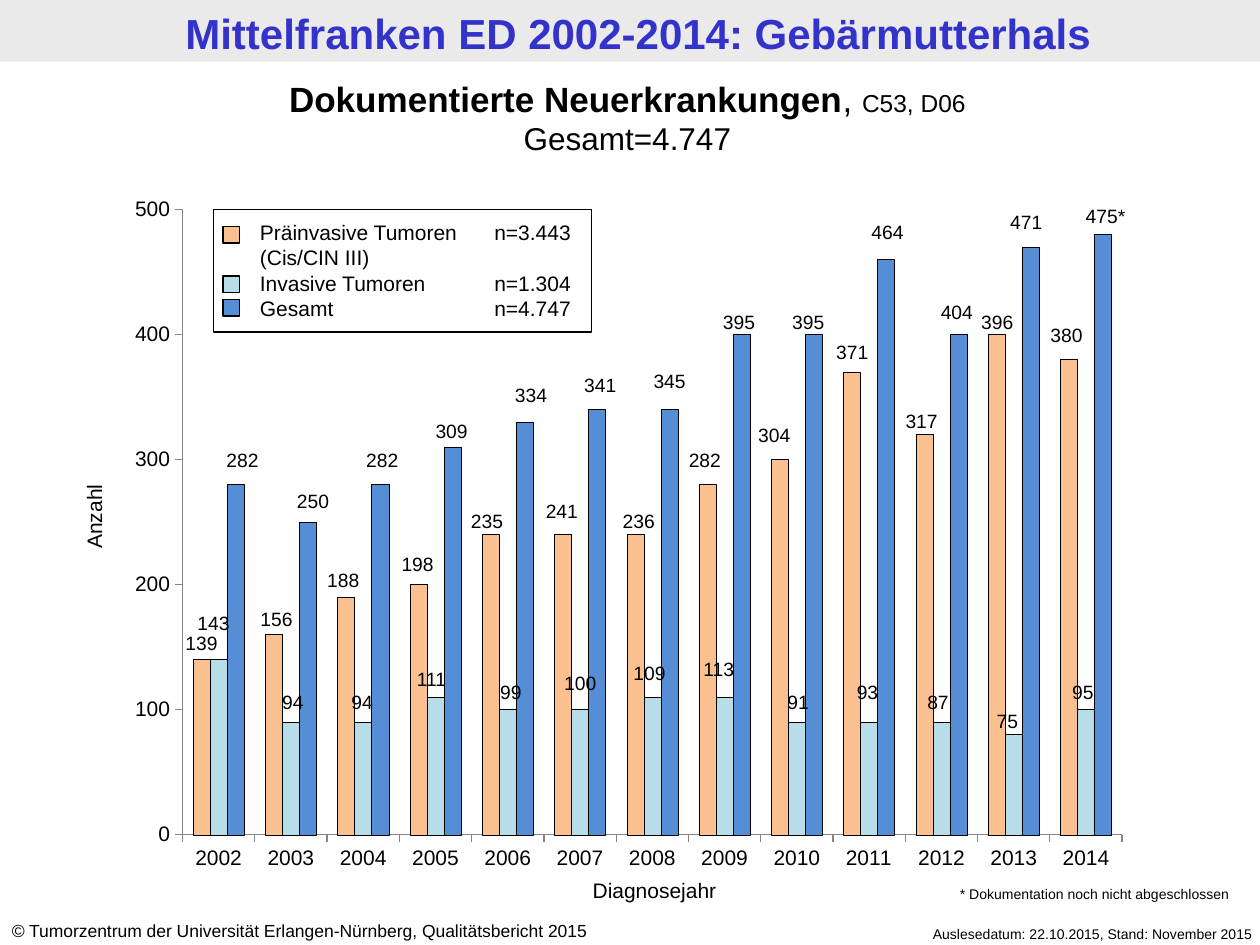
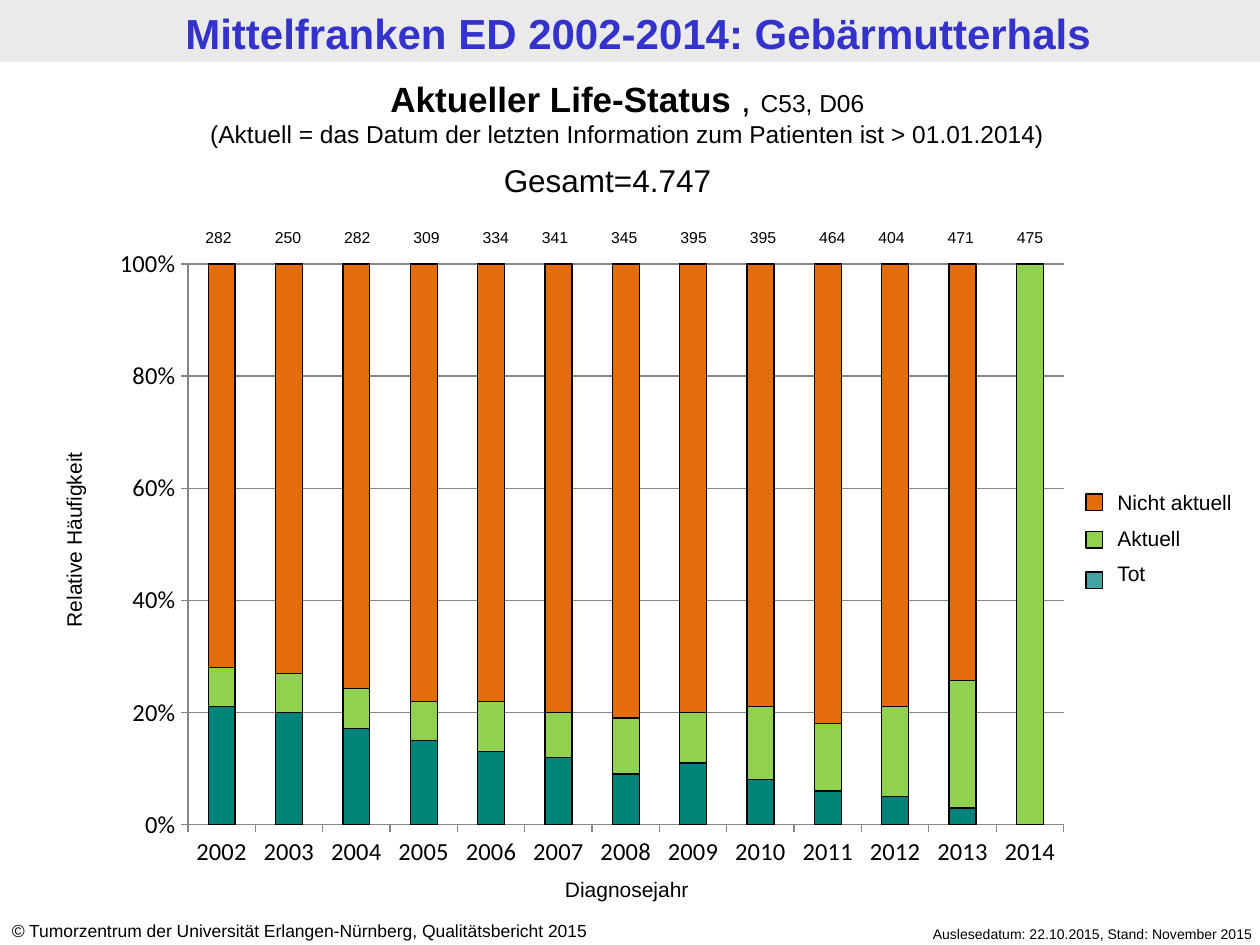
from lxml.etree import SubElement as Sub
from pptx import Presentation
from pptx.chart.data import CategoryChartData as Data
from pptx.dml.color import RGBColor as RGB
from pptx.enum.chart import XL_CHART_TYPE as Kind, XL_TICK_MARK as Tick
from pptx.enum.shapes import MSO_SHAPE as Form
from pptx.enum.text import MSO_AUTO_SIZE as Auto, PP_ALIGN as Align
from pptx.oxml.ns import qn
from pptx.util import Inches, Pt

BLACK = RGB(0x00, 0x00, 0x00)
BLUE = RGB(0x33, 0x33, 0xCC)
BAND = RGB(0xEA, 0xEA, 0xEA)
GREY = RGB(0x86, 0x86, 0x86)
PEACH = RGB(0xFA, 0xC0, 0x90)
ICE = RGB(0xB7, 0xDE, 0xE8)
SKY = RGB(0x55, 0x8E, 0xD5)
TEAL = RGB(0x00, 0x83, 0x78)
PALE = RGB(0x00, 0x83, 0x80)
LIME = RGB(0x92, 0xD0, 0x50)
RUST = RGB(0xE4, 0x6C, 0x0A)

YEARS = [str(year) for year in range(2002, 2015)]
TOTALS = [282, 250, 282, 309, 334, 341, 345, 395, 395, 464, 404, 471, 475]

# Counts per tumour group: colour, values, label centres (columns), label tops (rows)
GROUPS = [
    (PEACH,
     [139, 156, 188, 198, 235, 241, 236, 282, 304, 371, 317, 396, 380],
     [16, 21.95, 27.25, 33.15, 38.65, 44.6, 50.7, 55.95, 61.45, 67.65, 73.15,
      79.15, 84.65],
     [49.6, 47.7, 44.6, 43.3, 39.9, 39.1, 39.9, 35.1, 33.1, 26.5, 32, 24.1,
      25.2]),
    (ICE,
     [143, 94, 94, 111, 99, 100, 109, 113, 91, 93, 87, 75, 95],
     [16.95, 23.25, 28.75, 34.25, 40.55, 46.05, 51.55, 57.05, 63.35, 68.85,
      74.45, 79.95, 85.95],
     [48, 54.3, 54.3, 52.5, 53.5, 52.8, 52, 51.7, 54.3, 53.5, 54.3, 55.8,
      53.5]),
    (SKY,
     TOTALS,
     [19.25, 24.85, 30.35, 35.85, 42.15, 47.65, 53.15, 58.65, 64.15, 70.45,
      75.95, 81.45, 87.75],
     [35.1, 38.3, 35.1, 32.8, 29.9, 29.1, 28.8, 24.1, 24.1, 17, 23.3, 16.2,
      15.7]),
]

# Shares of life status in percent, from the bottom of each column up
STATES = [
    (TEAL, [21, 20, 17, 15, 13, 12, 9, 11, 8, 6, 5, 3, 0]),
    (LIME, [7, 7, 7, 7, 9, 8, 10, 9, 13, 12, 16, 23, 100]),
    (RUST, [72, 73, 75, 78, 78, 80, 81, 80, 79, 82, 79, 75, 0]),
]


class Deck:
    """Shared style and current slide, on a grid of 100 columns by 75 rows."""
    cols, rows, face = 100, 75, "Arial"

    def __init__(self):
        self.show = Presentation()
        self.show.slide_width, self.show.slide_height = Inches(10), Inches(7.5)

    def grid(self, x, y, w, h):
        col = self.show.slide_width / self.cols
        row = self.show.slide_height / self.rows
        return [round(n) for n in (x * col, y * row, w * col, h * row)]

    def page(self):
        """Start a slide with its title band and footers."""
        self.slide = self.show.slides.add_slide(self.show.slide_layouts[6])
        self.rect(0, 0, 100, 4.9, BAND, edge=False)
        self.text(0.65, 0.2, 100, 4.9,
                  [[("Mittelfranken ED 2002-2014: Gebärmutterhals", 24, "b")]],
                  color=BLUE, pad=(0.09, 0.04))
        self.text(66.5, 72.95, 33.9, 2.4,
                  [[("Auslesedatum: 22.10.2015, Stand: November 2015", 8)]],
                  Align.RIGHT)
        self.text(-0.05, 72.55, 52.4, 2.7,
                  [[("©", 10, "i"),
                    (" Tumorzentrum der Universität Erlangen-Nürnberg, "
                     "Qualitätsbericht 2015", 10)]], Align.LEFT)

    def text(self, x, y, w, h, paras, align=Align.CENTER, color=BLACK,
             pad=(0.1, 0.05), turn=0, gap=0, tabs=()):
        """Text box; each paragraph is a list of (text, size, style) runs."""
        box = self.slide.shapes.add_textbox(*self.grid(x, y, w, h))
        box.rotation = turn
        frame = box.text_frame
        frame.word_wrap, frame.auto_size = True, Auto.SHAPE_TO_FIT_TEXT
        frame.margin_left = frame.margin_right = Inches(pad[0])
        frame.margin_top = frame.margin_bottom = Inches(pad[1])
        for i, runs in enumerate(paras):
            para = frame.add_paragraph() if i else frame.paragraphs[0]
            para.alignment = align
            if i and gap:
                para.space_before = Pt(gap)
            if tabs:
                stops = Sub(para._p.get_or_add_pPr(), qn("a:tabLst"))
                for place, side in tabs:
                    Sub(stops, qn("a:tab"), pos=str(Inches(place)), algn=side)
            for words, size, *style in runs:
                run = para.add_run()
                run.text = words
                font = run.font
                font.name, font.size, font.color.rgb = self.face, Pt(size), color
                font.bold, font.italic = "b" in style, "i" in style

    def rect(self, x, y, w, h, fill=None, edge=True, alpha=None):
        box = self.slide.shapes.add_shape(Form.RECTANGLE, *self.grid(x, y, w, h))
        box.shadow.inherit = False
        if fill is None:
            box.fill.background()
        else:
            box.fill.solid()
            box.fill.fore_color.rgb = fill
        if alpha:
            tint = box._element.spPr.find(qn("a:solidFill"))[0]
            Sub(tint, qn("a:alpha"), val=str(alpha * 1000))
        if edge:
            box.line.color.rgb, box.line.width = BLACK, Pt(0.75)
        else:
            box.line.fill.background()

    def key(self, x, y, fill, alpha=None):
        """Small legend square."""
        self.rect(x, y, 1.3, 1.3, fill, alpha=alpha)

    def chart(self, spot, kind, parts, plot, gap, edge, step, size, face,
              top=None, form="General", lines=False, lap=0):
        """Column chart; plot is the inner area as shares of the chart."""
        data = Data()
        data.categories = YEARS
        for i, (_, vals) in enumerate(parts, 1):
            data.add_series(f"Series {i}", vals)
        chart = self.slide.shapes.add_chart(kind, *self.grid(*spot), data).chart
        chart.has_legend = chart.has_title = False
        chart.font.size, chart.font.name = Pt(18), "Calibri"
        chart.font.color.rgb = BLACK
        bars = chart.plots[0]
        bars.gap_width, bars.overlap, bars.vary_by_categories = gap, lap, False
        for row, (color, _) in zip(bars.series, parts):
            row.format.fill.solid()
            row.format.fill.fore_color.rgb = color
            row.format.line.color.rgb = BLACK
            row.format.line.width = Pt(edge)
        for axis in (chart.category_axis, chart.value_axis):
            axis.major_tick_mark, axis.minor_tick_mark = Tick.OUTSIDE, Tick.NONE
            axis.has_major_gridlines = False
            axis.format.line.color.rgb = GREY
            font = axis.tick_labels.font
            font.size, font.name, font.color.rgb = Pt(size), face, BLACK
        axis.minimum_scale, axis.major_unit = 0, step
        if top:
            axis.maximum_scale = top
        axis.tick_labels.number_format = form
        axis.tick_labels.number_format_is_linked = False
        if lines:
            axis.has_major_gridlines = True
            axis.major_gridlines.format.line.color.rgb = GREY
        self.place(chart, plot)

    def place(self, chart, plot):
        """Fix the inner plot area."""
        area = chart._chartSpace.chart.plotArea
        for old in area.findall(qn("c:layout")):
            area.remove(old)
        layout = Sub(area, qn("c:layout"))
        area.insert(0, layout)
        manual = Sub(layout, qn("c:manualLayout"))
        marks = [("layoutTarget", "inner"), ("xMode", "edge"), ("yMode", "edge")]
        for tag, val in marks + list(zip("xywh", plot)):
            Sub(manual, qn(f"c:{tag}"), val=str(val))


def cases(deck):
    """New cases per year; columns to the nearest ten, exact counts as labels."""
    deck.page()
    parts = [(color, [round(val, -1) for val in vals])
             for color, vals, *_ in GROUPS]
    deck.chart((9.1, 14.7, 81.6, 55.5), Kind.COLUMN_CLUSTERED, parts,
               (0.066, 0.035, 0.914, 0.894),
               gap=124, edge=0.25, step=100, size=12, face="Arial", top=500)
    deck.text(-0.4, 5.65, 100.4, 7.4,
              [[("Dokumentierte Neuerkrankungen", 20, "b"), (", ", 20),
                ("C53, D06", 14)], [("Gesamt=4.747", 18)]])
    deck.text(36.6, 69.15, 30.7, 3, [[("Diagnosejahr", 12)]])
    deck.text(-5.6, 39.5, 26.1, 3, [[("Anzahl", 12)]], turn=270)

    # Legend
    names = ["Präinvasive Tumoren\tn=\t3.443 (Cis/CIN III)",
             "Invasive Tumoren \t\tn=\t1.304", "Gesamt\t\tn=\t4.747"]
    deck.text(19.65, 16.95, 27.3, 9.1, [[(name, 12)] for name in names],
              Align.LEFT,
              tabs=[(1.47, "l"), (1.86, "l"), (2.36, "r"), (4.41, "l")])
    deck.rect(16.95, 16.65, 30, 9.7)
    for group, y in zip(GROUPS, (18, 21.9, 23.8)):
        deck.key(17.7, y, group[0])

    # Counts above the columns; the last total has a footnote
    for color, vals, mids, tops in GROUPS:
        for year, val, mid, y in zip(YEARS, vals, mids, tops):
            star = "*" if color == SKY and year == YEARS[-1] else ""
            deck.text(mid - 3.15, y, 6.3, 2.9, [[(f"{val}{star}", 11)]])
    deck.text(75.2, 69.8, 27, 2.4,
              [[("* Dokumentation noch nicht abgeschlossen", 8)]], Align.LEFT)


def status(deck):
    """Life status per year."""
    deck.page()
    deck.chart((7.9, 18.7, 78, 51.1), Kind.COLUMN_STACKED_100, STATES,
               (0.09, 0.044, 0.891, 0.871), gap=150, edge=0.75, step=0.2,
               size=14, face="Calibri", form="0%", lines=True, lap=100)
    deck.text(-6.15, 41.3, 24.1, 3.1, [[("Relative Häufigkeit", 12)]], turn=270)
    deck.text(38.5, 69.05, 22.5, 3.1, [[("Diagnosejahr", 12)]])

    # Totals above the columns, pulled back a little after every fifth
    for i, total in enumerate(TOTALS):
        deck.text(14.6 + 5.5 * i - 0.8 * (i // 5), 17.62, 5.5, 2.5,
                  [[(str(total), 9)]])

    # Legend
    names = ["Nicht aktuell", "Aktuell", "Tot"]
    deck.text(87.7, 38.35, 12.3, 9.1, [[(name, 12)] for name in names],
              Align.LEFT, gap=6)
    deck.key(86.2, 39.2, RUST)
    deck.key(86.2, 42.2, LIME)
    deck.key(86.2, 45.4, PALE, alpha=74)

    # Heading
    deck.text(-0.4, 5.65, 100.4, 6.7,
              [[("Aktueller Life-Status ", 20, "b"), (", ", 20),
                ("C53, D06", 14)],
               [("(Aktuell = das Datum der letzten Information zum Patienten "
                 "ist > 01.01.2014)", 14)]])
    deck.text(39, 12.3, 22, 4, [[("Gesamt=4.747", 18)]], Align.LEFT)


def main():
    deck = Deck()
    cases(deck)
    status(deck)
    deck.show.save("out.pptx")


if __name__ == "__main__":
    main()
